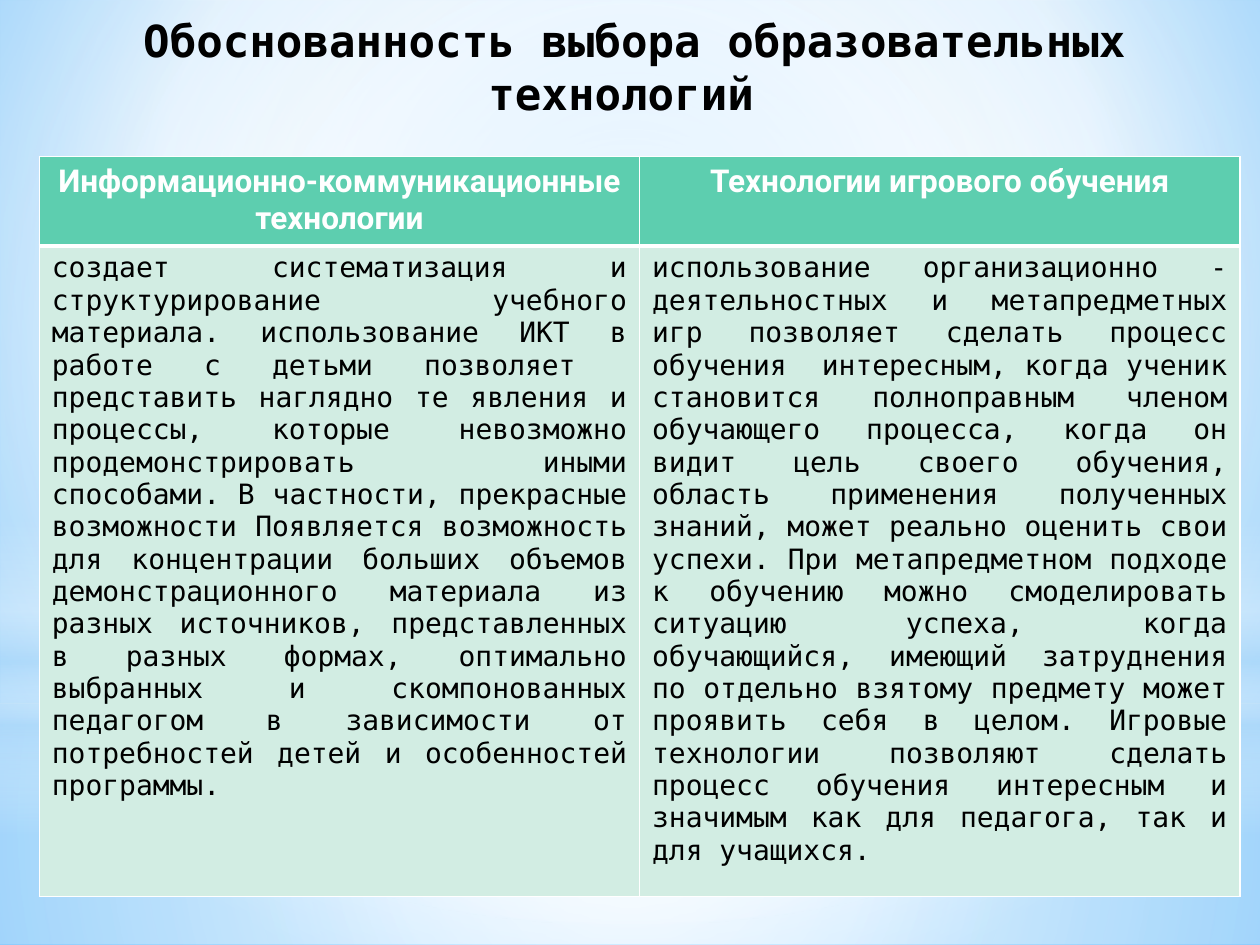
from lxml import etree
from pptx import Presentation
from pptx import util as u
from pptx.dml.color import RGBColor
from pptx.enum import shapes, text
from pptx.oxml import ns

WHITE = RGBColor(0xFF, 0xFF, 0xFF)
BLACK = RGBColor(0, 0, 0)
SKY = RGBColor(0x9E, 0xD5, 0xFF)
BLUE = RGBColor(0x5B, 0xB9, 0xFF)
HAZE = RGBColor(0xB4, 0xDC, 0xFA)
GREEN = RGBColor(0x5D, 0xCE, 0xAF)
MINT = RGBColor(0xD2, 0xED, 0xE3)
MONO = "DejaVu Sans Mono"
CENTRE = (50, 50, 50, 50)

HEADINGS = ("Информационно-коммуникационные технологии", "Технологии игрового обучения")
REASONS = (
    "создает систематизация и структурирование учебного материала. использование ИКТ "
    "в работе с детьми позволяет  представить наглядно те явления и процессы, которые "
    "невозможно продемонстрировать иными способами. В частности, прекрасные возможности "
    "Появляется возможность для концентрации больших объемов демонстрационного материала "
    "из разных источников, представленных в разных формах, оптимально выбранных и "
    "скомпонованных педагогом в зависимости от потребностей детей и особенностей программы. ",
    "использование организационно - деятельностных и метапредметных игр позволяет сделать "
    "процесс обучения  интересным, когда ученик становится полноправным членом обучающего "
    "процесса, когда он видит цель своего обучения, область применения полученных знаний, "
    "может реально оценить свои успехи. При метапредметном подходе к обучению можно "
    "смоделировать ситуацию успеха, когда обучающийся, имеющий затруднения по отдельно "
    "взятому предмету может проявить себя в целом. Игровые технологии позволяют сделать "
    "процесс обучения интересным и значимым как для педагога, так и для учащихся. ",
)


def write(frame, words, font=MONO, size=16, color=BLACK, bold=False, align=text.PP_ALIGN.CENTER):
    paragraph = frame.paragraphs[0]
    paragraph.alignment = align
    run = paragraph.add_run()
    run.text = words
    run.font.name = font
    run.font.size = u.Pt(size)
    run.font.color.rgb = color
    run.font.bold = bold


def add(parent, tag, **attributes):
    return etree.SubElement(parent, ns.qn(tag), {k: str(v) for k, v in attributes.items()})


class Board:
    def __init__(self, slide):
        self.slide = slide

    def gradient(self, fill, element, stops, focus=None, angle=90):
        fill.gradient()
        grad = element.find(".//" + ns.qn("a:gradFill"))
        for child in list(grad):
            grad.remove(child)
        stop_list = add(grad, "a:gsLst")
        for place, color, opacity in stops:
            stop = add(stop_list, "a:gs", pos=place * 1000)
            tone = add(stop, "a:srgbClr", val=color)
            if opacity < 100:
                add(tone, "a:alpha", val=opacity * 1000)
        if focus:
            sides = {side: share * 1000 for side, share in zip("ltrb", focus)}
            add(add(grad, "a:path", path="circle"), "a:fillToRect", **sides)
        else:
            add(grad, "a:lin", ang=angle * 60000, scaled=0)

    def background(self, stops, focus):
        self.gradient(self.slide.background.fill, self.slide.element, stops, focus)

    def glow(self, top, height, stops, focus=None, kind=shapes.MSO_SHAPE.RECTANGLE):
        glow = self.slide.shapes.add_shape(kind, 0, u.Pt(top), u.Pt(720), u.Pt(height))
        glow.shadow.inherit = False
        glow.line.fill.background()
        self.gradient(glow.fill, glow.element, stops, focus)

    def title(self, words, left, top, width, height):
        box = self.slide.shapes.add_textbox(u.Pt(left), u.Pt(top), u.Pt(width), u.Pt(height))
        frame = box.text_frame
        frame.word_wrap = True
        frame.vertical_anchor = text.MSO_ANCHOR.BOTTOM
        write(frame, words, size=25.2, bold=True)

    def border(self, cell, bottom):
        properties = cell._tc.get_or_add_tcPr()
        for index, (side, width) in enumerate(zip("LRTB", (1, 1, 1, bottom))):
            line = etree.Element(ns.qn(f"a:ln{side}"), w=str(u.Pt(width)))
            add(add(line, "a:solidFill"), "a:srgbClr", val=WHITE)
            properties.insert(index, line)

    def table(self, left, top, width, heights):
        grid = self.slide.shapes.add_table(
            2, 2, u.Pt(left), u.Pt(top), u.Pt(width), u.Pt(sum(heights))).table
        grid.horz_banding = False
        for row, height in zip(grid.rows, heights):
            row.height = u.Pt(height)
        heading = dict(font="Roboto", size=18, color=WHITE, bold=True)
        reason = dict(align=text.PP_ALIGN.JUSTIFY)
        rows = ((HEADINGS, GREEN, 3, heading), (REASONS, MINT, 1, reason))
        for r, (entries, shade, bottom, style) in enumerate(rows):
            for c, words in enumerate(entries):
                cell = grid.cell(r, c)
                cell.fill.solid()
                cell.fill.fore_color.rgb = shade
                self.border(cell, bottom)
                write(cell.text_frame, words, **style)


def main():
    deck = Presentation()
    deck.slide_width, deck.slide_height = u.Pt(720), u.Pt(540)
    board = Board(deck.slides.add_slide(deck.slide_layouts[6]))
    board.background([(0, SKY, 100), (60, WHITE, 100), (100, BLUE, 100)], (20, 10, 20, 60))
    board.glow(402, 138, [(0, WHITE, 91), (37, WHITE, 76), (100, HAZE, 79)], CENTRE)
    board.glow(0, 402, [(0, WHITE, 89), (48, WHITE, 62), (100, HAZE, 79)], CENTRE)
    board.glow(297, 180, [(0, WHITE, 0), (29, WHITE, 30), (45, HAZE, 40),
                          (55, WHITE, 26), (65, HAZE, 60), (100, WHITE, 0)])
    board.glow(126, 402, [(0, WHITE, 100), (56, WHITE, 0)], CENTRE, shapes.MSO_SHAPE.OVAL)
    board.title("Обоснованность выбора образовательных технологий ", 25, 24, 675, 47.5)
    board.table(22.5, 89.5, 686, (51, 315))
    deck.save("out.pptx")


if __name__ == "__main__":
    main()
